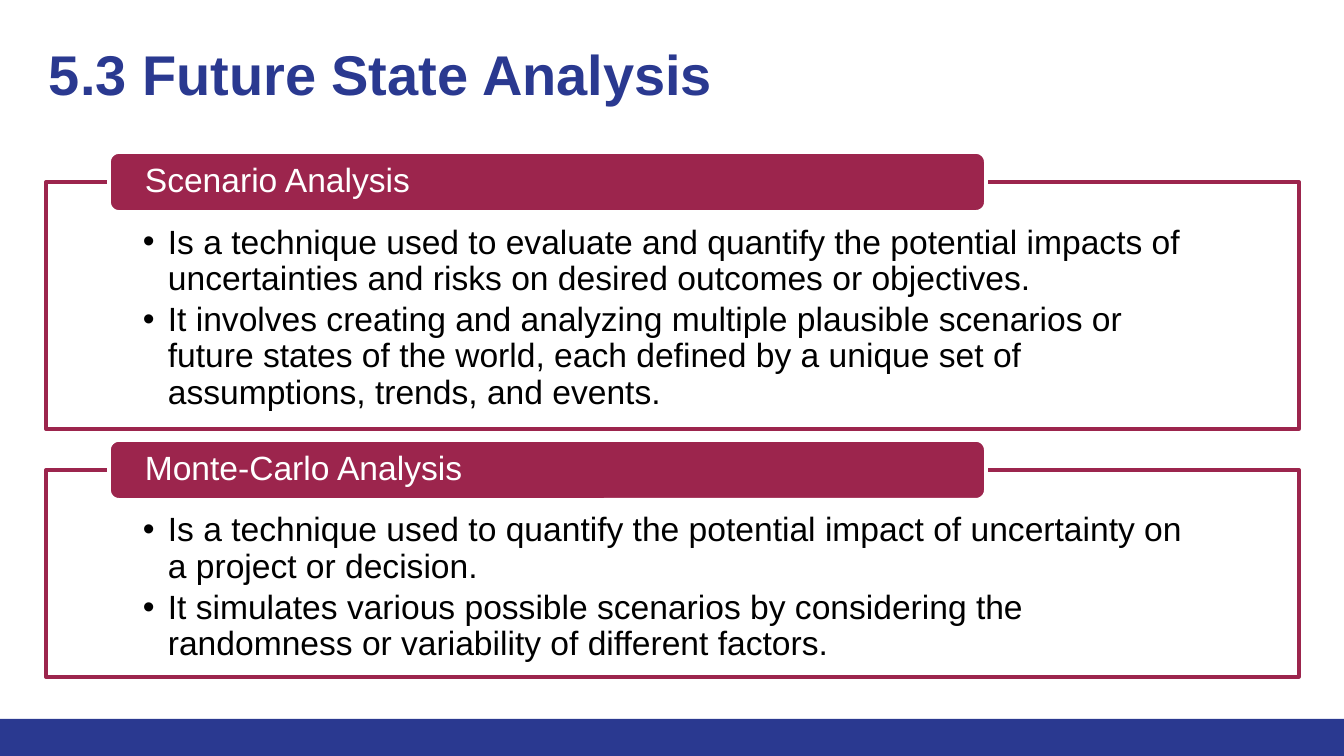
import pptx
import pptx.dml.color
import pptx.enum.shapes
import pptx.enum.text
import pptx.oxml.ns
import pptx.util
from lxml import etree

EMU_PER_PX = 914400 / 134.4
WIDTH, HEIGHT = 1344, 756
COLORS = {"blue": "2A3990", "crimson": "9C254D", "white": "FFFFFF", "black": "000000"}
SHAPES = pptx.enum.shapes.MSO_SHAPE
ANCHORS = pptx.enum.text.MSO_ANCHOR

PANELS = [
    ((46, 182, 1253, 247), "Scenario Analysis", [
        "Is a technique used to evaluate and quantify the potential impacts of "
        "uncertainties and risks on desired outcomes or objectives.",
        "It involves creating and analyzing multiple plausible scenarios or future states "
        "of the world, each defined by a unique set of assumptions, trends, and events.",
    ]),
    ((46, 470, 1253, 207), "Monte-Carlo Analysis", [
        "Is a technique used to quantify the potential impact of uncertainty on a project "
        "or decision.",
        "It simulates various possible scenarios by considering the randomness or "
        "variability of different factors.",
    ]),
]


def px(n):
    return pptx.util.Emu(round(n * EMU_PER_PX))


def rgb(name):
    return pptx.dml.color.RGBColor.from_string(COLORS[name])


def add_box(slide, kind, box, fill, line=None, opacity=100):
    sp = slide.shapes.add_shape(kind, *map(px, box))
    sp.shadow.inherit = False
    sp.fill.solid()
    sp.fill.fore_color.rgb = rgb(fill)
    if opacity < 100:
        color = sp.fill._xPr.find(".//" + pptx.oxml.ns.qn("a:srgbClr"))
        etree.SubElement(color, pptx.oxml.ns.qn("a:alpha"), val=str(opacity * 1000))
    if line:
        sp.line.color.rgb = rgb(line)
        sp.line.width = pptx.util.Pt(2)
    else:
        sp.line.fill.background()
    return sp


def add_bullet(p, indent):
    pPr = p._p.get_or_add_pPr()
    pPr.set("marL", str(px(indent)))
    pPr.set("indent", str(-px(indent)))
    etree.SubElement(pPr, pptx.oxml.ns.qn("a:buFont"), typeface="Arial")
    etree.SubElement(pPr, pptx.oxml.ns.qn("a:buChar"), char="•")


def write(sp, paragraphs, size=18, color="black", bold=False, insets=(0, 0, 0, 0),
          anchor=ANCHORS.TOP, spacing=0.9, after=0, bullets=False):
    """Fill a shape with paragraphs; insets are left, top, right, bottom."""
    tf = sp.text_frame
    tf.word_wrap = True
    tf.vertical_anchor = anchor
    tf.margin_left, tf.margin_top, tf.margin_right, tf.margin_bottom = map(px, insets)
    for i, text in enumerate(paragraphs):
        p = tf.paragraphs[0] if i == 0 else tf.add_paragraph()
        p.alignment = pptx.enum.text.PP_ALIGN.LEFT
        p.line_spacing = spacing
        p.space_after = pptx.util.Pt(after)
        if bullets:
            add_bullet(p, 25)
        r = p.add_run()
        r.text = text
        r.font.name = "Arial"
        r.font.size = pptx.util.Pt(size)
        r.font.bold = bold
        r.font.color.rgb = rgb(color)


def add_title(slide, box, text):
    sp = slide.shapes.add_textbox(*map(px, box))
    write(sp, [text], size=30, color="blue", bold=True, insets=(13, 13, 13, 13), spacing=1.0)


def add_panel(slide, box, heading, points):
    """Outlined panel of bullets with a heading tab across its top edge."""
    x, y, w, h = box
    body = add_box(slide, SHAPES.RECTANGLE, box, "white", line="crimson", opacity=90)
    write(body, points, insets=(97, 43, 97, 19), after=2.7, bullets=True)
    tab_h = 60
    tab_box = (x + 63, y - tab_h // 2, w * 7 // 10, tab_h)
    tab = add_box(slide, SHAPES.ROUNDED_RECTANGLE, tab_box, "crimson", line="white")
    write(tab, [heading], color="white", insets=(33, 0, 33, 0), anchor=ANCHORS.MIDDLE)


def main():
    prs = pptx.Presentation()
    prs.slide_width, prs.slide_height = px(WIDTH), px(HEIGHT)
    slide = prs.slides.add_slide(prs.slide_layouts[6])
    add_box(slide, SHAPES.RECTANGLE, (0, 719, WIDTH, HEIGHT - 719), "blue")
    for box, heading, points in PANELS:
        add_panel(slide, box, heading, points)
    add_title(slide, (36, 27, 1236, 120), "5.3 Future State Analysis")
    prs.save("out.pptx")


if __name__ == "__main__":
    main()
